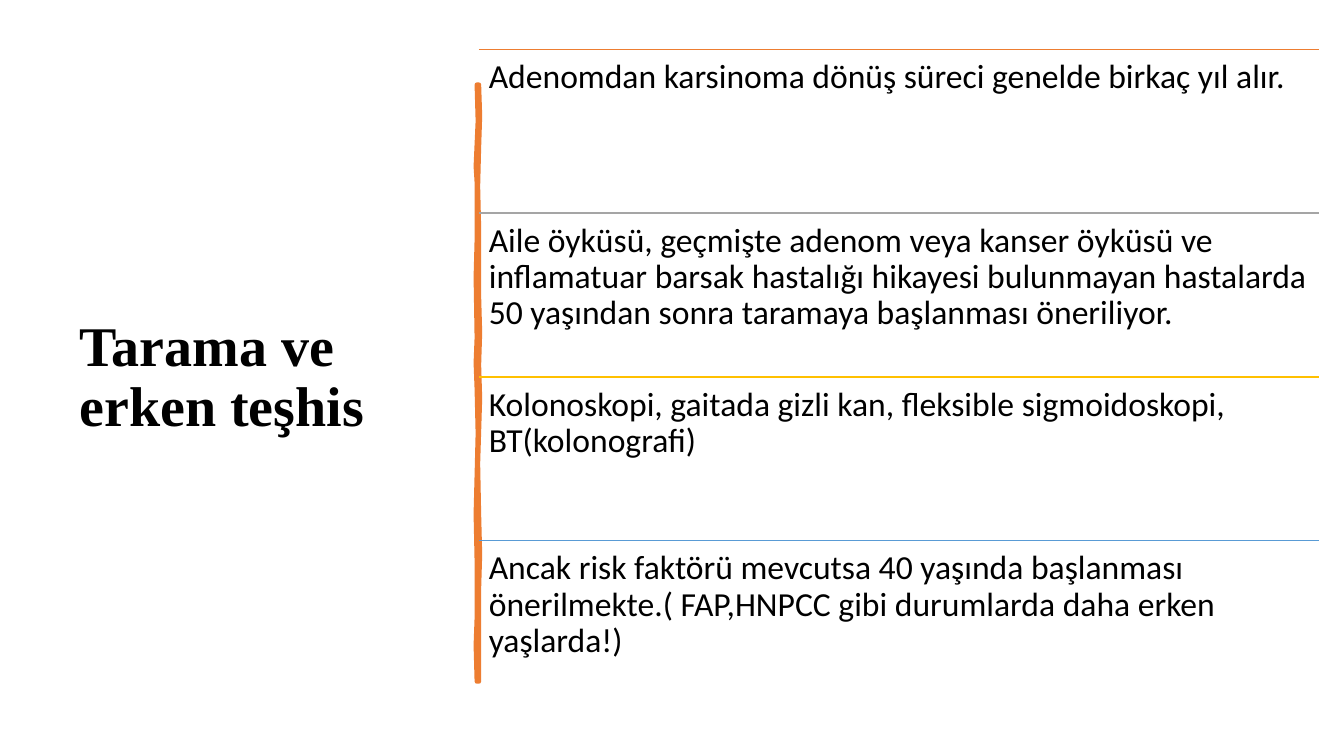
from dataclasses import dataclass

from lxml.etree import SubElement
from pptx import Presentation
from pptx.dml.color import RGBColor
from pptx.enum.shapes import MSO_CONNECTOR
from pptx.enum.text import MSO_ANCHOR, MSO_AUTO_SIZE, PP_ALIGN
from pptx.oxml.ns import qn
from pptx.util import Inches, Pt


@dataclass(frozen=True)
class Theme:
    ink: RGBColor = RGBColor(0x00, 0x00, 0x00)
    paper: RGBColor = RGBColor(0xFF, 0xFF, 0xFF)
    orange: RGBColor = RGBColor(0xED, 0x7D, 0x31)
    gray: RGBColor = RGBColor(0xA5, 0xA5, 0xA5)
    gold: RGBColor = RGBColor(0xFF, 0xC0, 0x00)
    blue: RGBColor = RGBColor(0x59, 0x9B, 0xD5)
    head: str = "Times New Roman"
    body: str = "Calibri"
    large: Pt = Pt(40)
    small: Pt = Pt(24)
    thick: Pt = Pt(3.25)
    thin: Pt = Pt(1)


THEME = Theme()
LEFT, TOP, WIDTH, HEIGHT = 4.75, 0.49, 8.33, 6.5

ROWS = [
    ("Adenomdan karsinoma dönüş süreci genelde birkaç yıl alır.", THEME.orange),
    ("Aile öyküsü, geçmişte adenom veya kanser öyküsü ve inflamatuar barsak "
     "hastalığı hikayesi bulunmayan hastalarda 50 yaşından sonra taramaya "
     "başlanması öneriliyor.", THEME.gray),
    ("Kolonoskopi, gaitada gizli kan, fleksible sigmoidoskopi, "
     "BT(kolonografi)", THEME.gold),
    ("Ancak risk faktörü mevcutsa 40 yaşında başlanması önerilmekte.( FAP,HNPCC "
     "gibi durumlarda daha erken yaşlarda!)", THEME.blue),
]

STROKE = [
    (4.75, 0.84), (4.76, 1.15), (4.75, 1.46), (4.74, 1.85), (4.75, 2.26),
    (4.75, 2.94), (4.76, 3.3), (4.75, 3.62), (4.76, 3.95), (4.74, 4.6),
    (4.75, 5.1), (4.76, 5.5), (4.75, 5.84), (4.75, 6.76), (4.73, 6.76),
    (4.72, 6.4), (4.73, 6.13), (4.73, 5.57), (4.72, 5.1), (4.73, 4.71),
    (4.74, 4.3), (4.73, 3.86), (4.72, 3.6), (4.73, 3.35), (4.72, 2.75),
    (4.73, 2.38), (4.73, 1.81), (4.72, 1.65), (4.74, 1.2), (4.73, 0.84),
]


def apply(item, values):
    for name, value in values.items():
        setattr(item, name, value)


def write(shape, text, font, anchor, inset):
    frame = shape.text_frame
    apply(frame, {
        "text": text, "word_wrap": True, "auto_size": MSO_AUTO_SIZE.NONE,
        "vertical_anchor": anchor,
        "margin_left": Inches(0.1), "margin_right": Inches(0.1),
        "margin_top": Inches(inset), "margin_bottom": Inches(inset),
    })
    line = frame.paragraphs[0]
    apply(line, {"line_spacing": 0.9, "alignment": PP_ALIGN.LEFT})
    apply(line.runs[0].font, font)
    line.runs[0].font.color.rgb = THEME.ink


def add_title(slide, text):
    title = slide.shapes.title
    apply(title, {"left": Inches(0.69), "top": Inches(0.7),
                  "width": Inches(3.74), "height": Inches(6.11)})
    font = {"name": THEME.head, "size": THEME.large, "bold": True}
    write(title, text, font, MSO_ANCHOR.MIDDLE, 0.05)


def add_stroke(slide):
    points = [tuple(map(Inches, point)) for point in STROKE]
    pen = slide.shapes.build_freeform(*points[0], scale=1.0)
    pen.add_line_segments(points[1:], close=True)
    shape = pen.convert_to_shape()
    shape.shadow.inherit = False
    shape.fill.solid()
    shape.fill.fore_color.rgb = THEME.orange
    shape.line.color.rgb = THEME.orange
    shape.line.width = THEME.thick


def add_rule(group, top, color):
    rule = group.shapes.add_connector(
        MSO_CONNECTOR.STRAIGHT, Inches(LEFT), Inches(top),
        Inches(LEFT + WIDTH), Inches(top))
    rule.line.color.rgb = color
    rule.line.width = THEME.thin
    SubElement(rule.element.spPr, qn("a:effectLst"))


def add_row(group, top, height, text, color):
    add_rule(group, top, color)
    box = group.shapes.add_textbox(
        Inches(LEFT), Inches(top), Inches(WIDTH), Inches(height))
    font = {"name": THEME.body, "size": THEME.small}
    write(box, text, font, MSO_ANCHOR.TOP, 0.1)


def main():
    deck = Presentation()
    apply(deck, {"slide_width": Inches(13.33), "slide_height": Inches(7.5)})
    slide = deck.slides.add_slide(deck.slide_layouts[5])
    slide.background.fill.solid()
    slide.background.fill.fore_color.rgb = THEME.paper
    add_title(slide, "Tarama ve erken teşhis")
    add_stroke(slide)
    group = slide.shapes.add_group_shape()
    step = HEIGHT / len(ROWS)
    for index, (text, color) in enumerate(ROWS):
        add_row(group, TOP + index * step, step, text, color)
    deck.save("out.pptx")


if __name__ == "__main__":
    main()
